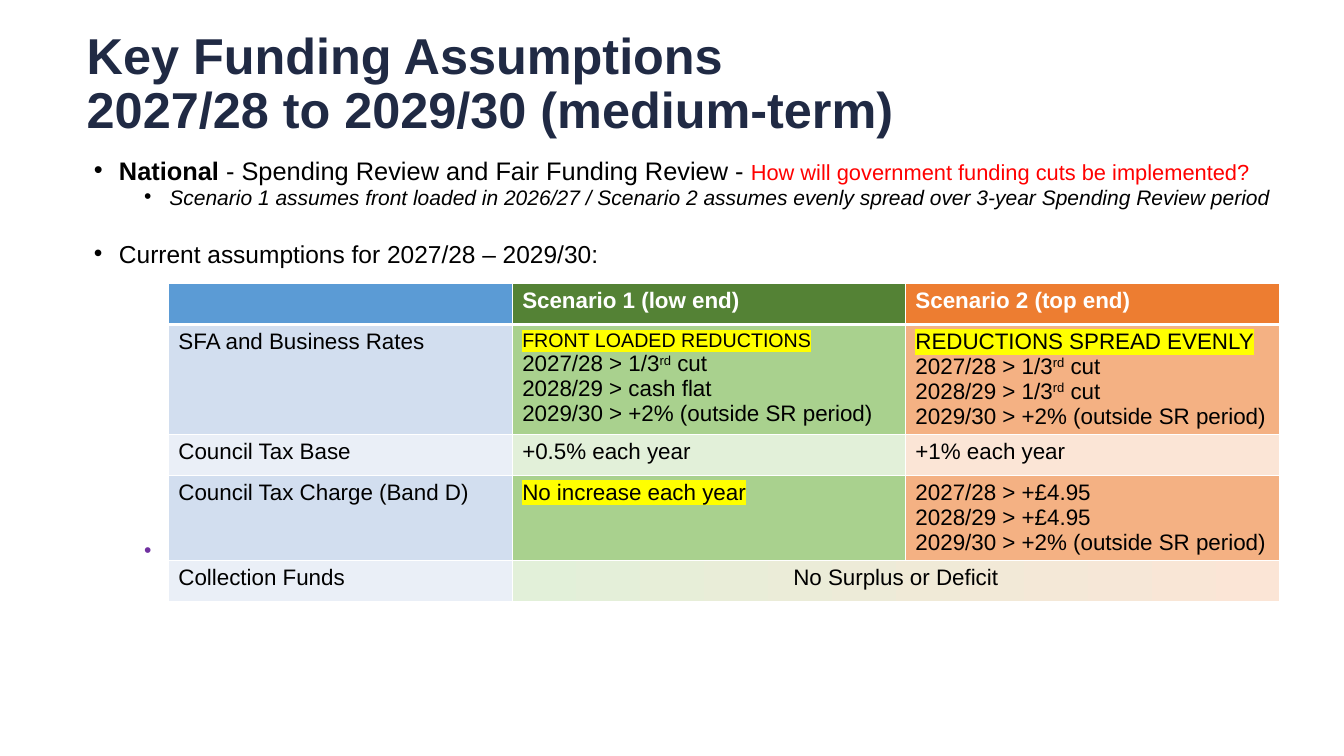
from copy import deepcopy

from lxml.etree import SubElement
from pptx import Presentation
from pptx.dml.color import RGBColor
from pptx.enum.text import MSO_ANCHOR, MSO_AUTO_SIZE, PP_ALIGN
from pptx.oxml import parse_xml
from pptx.oxml.ns import nsdecls, qn
from pptx.util import Inches, Pt

FONT = "Arial"
NAVY = RGBColor(0x20, 0x2A, 0x44)
BLACK = RGBColor(0, 0, 0)
WHITE = RGBColor(0xFF, 0xFF, 0xFF)
RED = RGBColor(0xFF, 0, 0)
PURPLE = RGBColor(0x70, 0x30, 0xA0)
YELLOW = RGBColor(0xFF, 0xFF, 0)
BLUE = RGBColor(0x5B, 0x9B, 0xD5)
BLUE_MID = RGBColor(0xD2, 0xDE, 0xEF)
BLUE_PALE = RGBColor(0xEA, 0xEF, 0xF7)
GREEN = RGBColor(0x54, 0x82, 0x35)
GREEN_MID = RGBColor(0xA9, 0xD1, 0x8E)
GREEN_PALE = RGBColor(0xE2, 0xF0, 0xD9)
ORANGE = RGBColor(0xED, 0x7D, 0x31)
ORANGE_MID = RGBColor(0xF4, 0xB1, 0x83)
ORANGE_PALE = RGBColor(0xFB, 0xE5, 0xD6)

# Fill colours by row: header, then alternating bands
HEADER = (BLUE, GREEN, ORANGE)
MID = (BLUE_MID, GREEN_MID, ORANGE_MID)
PALE = (BLUE_PALE, GREEN_PALE, ORANGE_PALE)
ROW_FILLS = (HEADER, MID, PALE, MID, PALE)

COL_WIDTHS = (3.41, 3.9, 3.71)
ROW_HEIGHTS = (0.41, 1.07, 0.41, 0.84, 0.41)

# Cells hold lines; ^ marks superscript and a leading * marks highlighting
ROWS = (
    ("", "Scenario 1 (low end)", "Scenario 2 (top end)"),
    ("SFA and Business Rates",
     "*FRONT LOADED REDUCTIONS\n2027/28 > 1/3^rd^ cut\n2028/29 > cash flat\n"
     "2029/30 > +2% (outside SR period)",
     "*REDUCTIONS SPREAD EVENLY\n2027/28 > 1/3^rd^ cut\n2028/29 > 1/3^rd^ cut\n"
     "2029/30 > +2% (outside SR period)"),
    ("Council Tax Base", "+0.5% each year", "+1% each year"),
    ("Council Tax Charge (Band D)", "*No increase each year",
     "2027/28 > +£4.95\n2028/29 > +£4.95\n2029/30 > +2% (outside SR period)"),
    ("Collection Funds", "No Surplus or Deficit", ""),
)
SMALL_LINE = "*FRONT LOADED REDUCTIONS"

# Level, space before in points, runs of (text, size, colour, format)
BULLETS = (
    (0, 0, (("National", 18.1, BLACK, {"bold": True}),
            (" - Spending Review and Fair Funding Review - ", 18.1, BLACK, {}),
            ("How will government funding cuts be implemented?", 15.6, RED, {}))),
    (1, 5, (("Scenario 1 assumes front loaded in 2026/27 / Scenario 2 assumes "
             "evenly spread over 3-year Spending Review period",
             15, BLACK, {"italic": True}),)),
    (0, 27, (("Current assumptions for 2027/28 – 2029/30:", 17.5, BLACK, {}),)),
    (1, 198, ((".", 15, PURPLE, {}),)),
)


def place(sp, left, top, width, height):
    sp.left, sp.top = Inches(left), Inches(top)
    sp.width, sp.height = Inches(width), Inches(height)


def add_run(p, text, size, color, **fmt):
    r = p.add_run()
    r.text = text
    values = {"name": FONT, "size": Pt(size), "bold": False, "italic": False, **fmt}
    for name, value in values.items():
        setattr(r.font, name, value)
    r.font.color.rgb = color
    return r


def highlight(r, color):
    xml = f'<a:highlight {nsdecls("a")}><a:srgbClr val="{color}"/></a:highlight>'
    r.font._element.find(qn("a:solidFill")).addnext(parse_xml(xml))


def add_bullet(p, level):
    p.level = level
    pPr = p._p.get_or_add_pPr()
    pPr.set("marL", str(Inches(0.25 + 0.5 * level)))
    pPr.set("indent", str(Inches(-0.25)))
    SubElement(pPr, qn("a:buFont")).set("typeface", FONT)
    SubElement(pPr, qn("a:buChar")).set("char", "•")


def fill_title(sp):
    place(sp, 0.76, 0.12, 11.82, 1.45)
    tf = sp.text_frame
    tf.auto_size = MSO_AUTO_SIZE.NONE
    tf.vertical_anchor = MSO_ANCHOR.MIDDLE
    p = tf.paragraphs[0]
    p.alignment = PP_ALIGN.LEFT
    p.line_spacing = 0.9
    r = add_run(p, "Key Funding Assumptions", 36, NAVY, bold=True)
    p.add_line_break()
    # The break takes the size of the text around it
    p._p[-1].append(deepcopy(r.font._element))
    add_run(p, "2027/28 to 2029/30 (medium-term)", 36, NAVY, bold=True)


def fill_body(sp):
    place(sp, 0.83, 1.57, 12.06, 4.8)
    tf = sp.text_frame
    tf.auto_size = MSO_AUTO_SIZE.NONE
    tf.vertical_anchor = MSO_ANCHOR.TOP
    for i, (level, before, runs) in enumerate(BULLETS):
        p = tf.add_paragraph() if i else tf.paragraphs[0]
        add_bullet(p, level)
        p.alignment = PP_ALIGN.LEFT
        p.line_spacing = 0.7
        p.space_before = Pt(before)
        for text, size, color, fmt in runs:
            add_run(p, text, size, color, **fmt)


def add_borders(cell, is_header):
    tcPr = cell._tc.get_or_add_tcPr()
    for i, side in enumerate(("lnL", "lnR", "lnT", "lnB")):
        width = Pt(3 if is_header and side == "lnB" else 1)
        tcPr.insert(i, parse_xml(
            f'<a:{side} {nsdecls("a")} w="{width}"><a:solidFill>'
            f'<a:srgbClr val="{WHITE}"/></a:solidFill></a:{side}>'))


def fill_cell(cell, text, color, is_header):
    cell.fill.solid()
    cell.fill.fore_color.rgb = color
    add_borders(cell, is_header)
    tf = cell.text_frame
    for i, line in enumerate(text.split("\n") if text else ()):
        p = tf.add_paragraph() if i else tf.paragraphs[0]
        size = 14 if line == SMALL_LINE else 16
        for j, part in enumerate(line.lstrip("*").split("^")):
            r = add_run(p, part, size, WHITE if is_header else BLACK, bold=is_header)
            if j % 2:
                r.font._element.set("baseline", "30000")
            if line.startswith("*"):
                highlight(r, YELLOW)


def add_scenario_table(s):
    table = s.shapes.add_table(
        len(ROWS), len(COL_WIDTHS), Inches(1.67), Inches(2.81),
        Inches(sum(COL_WIDTHS)), Inches(sum(ROW_HEIGHTS))).table
    for col, width in zip(table.columns, COL_WIDTHS):
        col.width = Inches(width)
    for i, (row, height) in enumerate(zip(table.rows, ROW_HEIGHTS)):
        row.height = Inches(height)
        for cell, text, color in zip(row.cells, ROWS[i], ROW_FILLS[i]):
            fill_cell(cell, text, color, i == 0)

    # Last row: one result shared by both scenarios
    shared = table.cell(4, 1)
    shared.merge(table.cell(4, 2))
    shared.text_frame.paragraphs[0].alignment = PP_ALIGN.CENTER
    shared.fill.gradient()
    shared.fill.gradient_angle = 0
    for stop, color in zip(shared.fill.gradient_stops, (GREEN_PALE, ORANGE_PALE)):
        stop.color.rgb = color


def main():
    prs = Presentation()
    prs.slide_width, prs.slide_height = Inches(13.33), Inches(7.5)
    s = prs.slides.add_slide(prs.slide_layouts[1])
    fill_title(s.shapes.title)
    fill_body(s.placeholders[1])
    add_scenario_table(s)
    prs.save("out.pptx")


if __name__ == "__main__":
    main()
